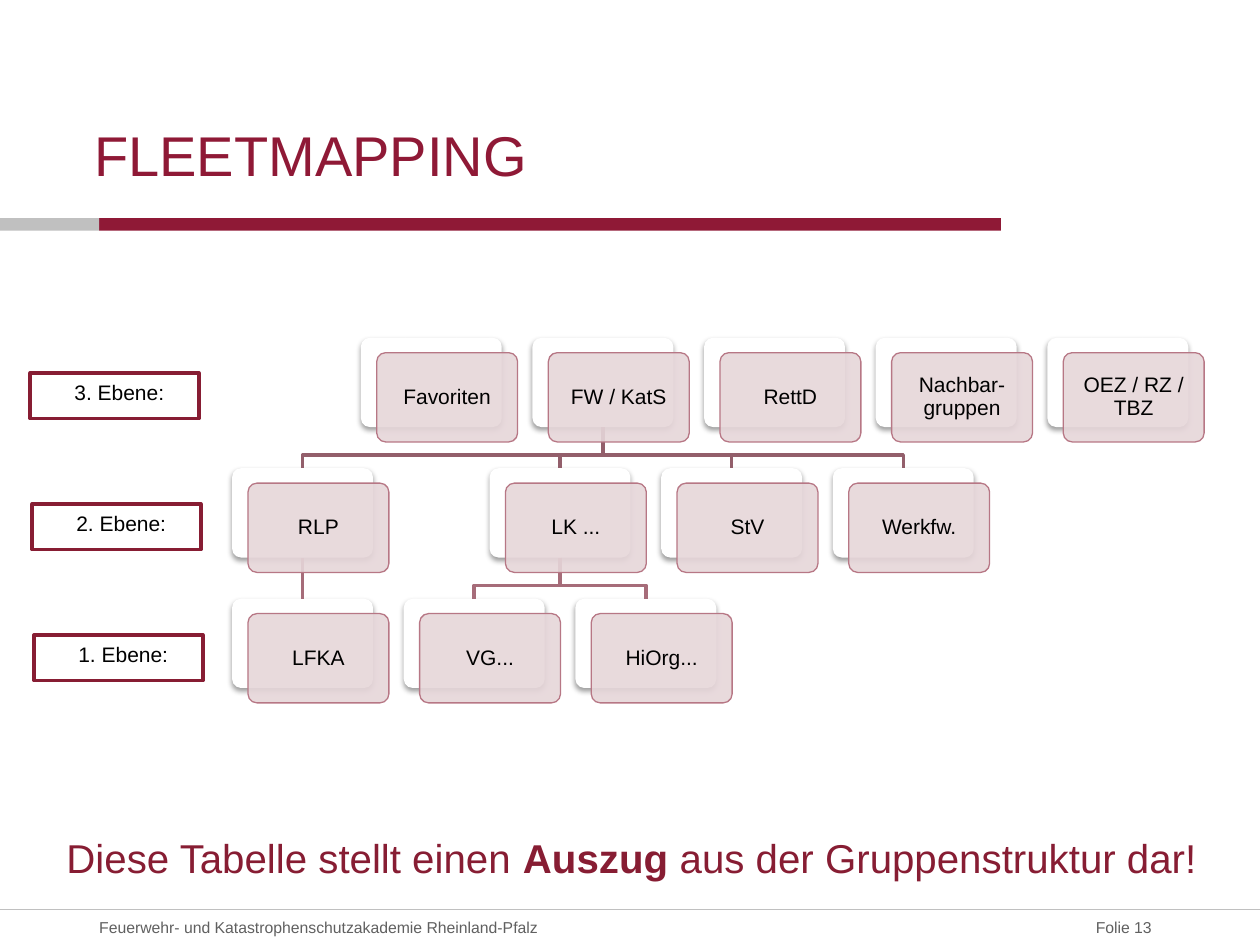
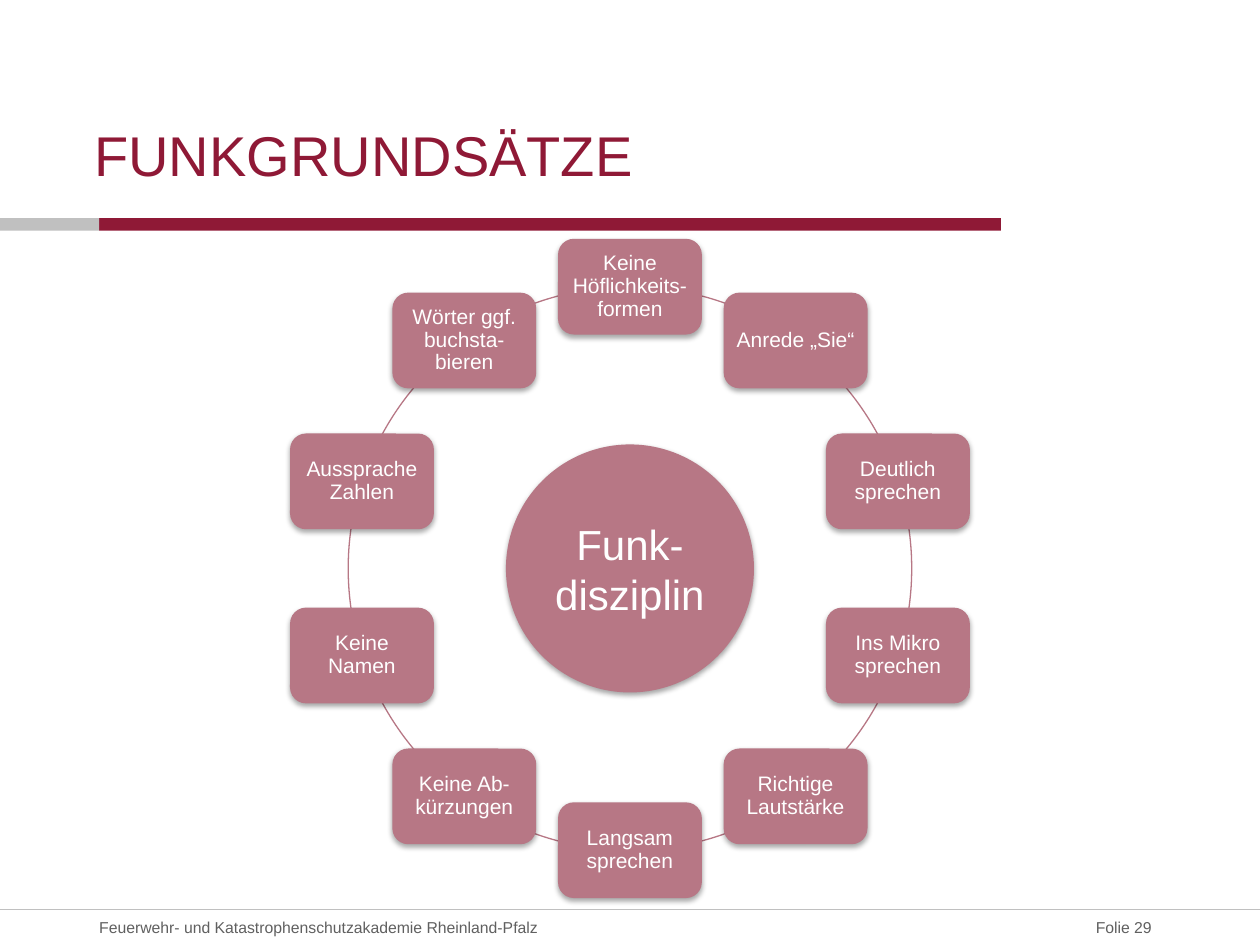
from math import cos, radians, sin

from lxml.etree import SubElement
from pptx import Presentation
from pptx.dml.color import RGBColor
from pptx.enum.shapes import MSO_CONNECTOR, MSO_SHAPE
from pptx.enum.text import MSO_ANCHOR, MSO_AUTO_SIZE, PP_ALIGN
from pptx.oxml.ns import qn
from pptx.util import Cm, Pt

RECT = MSO_SHAPE.RECTANGLE
ROUND = MSO_SHAPE.ROUNDED_RECTANGLE
OVAL = MSO_SHAPE.OVAL
LINE = MSO_CONNECTOR.STRAIGHT
LEFT, MID, RIGHT = PP_ALIGN.LEFT, PP_ALIGN.CENTER, PP_ALIGN.RIGHT
TOP, CENTRE, BASE = MSO_ANCHOR.TOP, MSO_ANCHOR.MIDDLE, MSO_ANCHOR.BOTTOM
FIXED = MSO_AUTO_SIZE.NONE

WHITE = RGBColor(0xFF, 0xFF, 0xFF)
BLACK = RGBColor(0, 0, 0)
RED = RGBColor(0x8F, 0x19, 0x36)
WINE = RGBColor(0x87, 0x1D, 0x33)
ROSE = RGBColor(0xB7, 0x77, 0x85)
PALE = RGBColor(0xE6, 0xD6, 0xD9)
UPPER = RGBColor(0x93, 0x5F, 0x6B)
LOWER = RGBColor(0xA6, 0x6C, 0x79)
SILVER = RGBColor(0xC0, 0xC0, 0xC0)
GREY = RGBColor(0x60, 0x60, 0x60)

FONT = "Arial"
WIDTH, HEIGHT = 25.4, 19.05
INSET = (0.13,) * 4
PLAIN = (0,) * 4
OWNER = "Feuerwehr- und Katastrophenschutzakademie Rheinland-Pfalz"

CARD_W, CARD_H = 2.84, 1.8
NODES = [
    ("Favoriten", 0, 0.75, None),
    ("FW / KatS", 0, 1.75, None),
    ("RettD", 0, 2.75, None),
    ("Nachbar-gruppen", 0, 3.75, None),
    ("OEZ / RZ / TBZ", 0, 4.75, None),
    ("RLP", 1, 0, "FW / KatS"),
    ("LK ...", 1, 1.5, "FW / KatS"),
    ("StV", 1, 2.5, "FW / KatS"),
    ("Werkfw.", 1, 3.5, "FW / KatS"),
    ("LFKA", 2, 0, "RLP"),
    ("VG...", 2, 1, "LK ..."),
    ("HiOrg...", 2, 2, "LK ..."),
]
RULES = [
    "Keine Höflichkeits-formen", "Anrede „Sie“", "Deutlich sprechen",
    "Ins Mikro sprechen", "Richtige Lautstärke", "Langsam sprechen",
    "Keine Ab-kürzungen", "Keine Namen", "Aussprache Zahlen",
    "Wörter ggf. buchsta-bieren",
]


class Deck:
    def __init__(self):
        self.prs = Presentation()
        self.prs.slide_width, self.prs.slide_height = Cm(WIDTH), Cm(HEIGHT)
        self.slide = None

    def start(self, title, number):
        self.slide = self.prs.slides.add_slide(self.prs.slide_layouts[5])
        head = self.slide.shapes.title
        head.left, head.top, head.width, head.height = Cm(1.9), Cm(1.22), Cm(16.23), Cm(2.57)
        self.letter(head, title, 32, RED, LEFT, BASE, PLAIN)
        self.shape(RECT, 2, 4.4, 18.18, 0.25, RED)
        self.shape(RECT, 0, 4.4, 2, 0.25, SILVER)
        self.line(0, 18.33, WIDTH, 18.33, SILVER, 0.75)
        self.label(OWNER, 2, 18.33, 14, 0.72, 9, GREY)
        self.label(f"Folie {number}", 20.17, 18.33, 3.05, 0.72, 9, GREY, RIGHT)

    def letter(self, shape, text, size, ink, align, anchor, inset, space=None):
        frame = shape.text_frame
        frame.word_wrap = True
        frame.auto_size = FIXED
        frame.vertical_anchor = anchor
        (frame.margin_left, frame.margin_top,
         frame.margin_right, frame.margin_bottom) = map(Cm, inset)
        para = frame.paragraphs[0]
        pieces = [text] if isinstance(text, str) else text
        para.text = pieces[0]
        for piece in pieces[1:]:
            para.add_run().text = piece
        para.alignment = align
        para.line_spacing = space
        for run in para.runs:
            run.font.name, run.font.size = FONT, Pt(size)
            run.font.color.rgb = ink
        return para

    def label(self, text, x, y, w, h, size, ink, align=LEFT, inset=PLAIN):
        box = self.slide.shapes.add_textbox(Cm(x), Cm(y), Cm(w), Cm(h))
        return self.letter(box, text, size, ink, align, CENTRE, inset)

    def shape(self, kind, x, y, w, h, fill=None, edge=None, weight=0.75,
              bevel=None, shade=0, alpha=None):
        item = self.slide.shapes.add_shape(kind, Cm(x), Cm(y), Cm(w), Cm(h))
        if bevel is not None:
            item.adjustments[0] = bevel
        self.paint(item, fill, edge, weight)
        props = item.element.spPr
        if alpha:
            tint = props.find(qn("a:solidFill")).find(qn("a:srgbClr"))
            SubElement(tint, qn("a:alpha"), val=str(alpha * 1000))
        if shade:
            drop = SubElement(props.find(qn("a:effectLst")), qn("a:outerShdw"),
                              blurRad="40000", dist="22000", dir="5400000", rotWithShape="0")
            tint = SubElement(drop, qn("a:srgbClr"), val=str(BLACK))
            SubElement(tint, qn("a:alpha"), val=str(shade * 1000))
        return item

    def paint(self, item, fill, edge, weight):
        item.shadow.inherit = False
        if fill is None:
            item.fill.background()
        else:
            item.fill.solid()
            item.fill.fore_color.rgb = fill
        if edge is None:
            item.line.fill.background()
        else:
            item.line.color.rgb = edge
            item.line.width = Pt(weight)

    def line(self, x1, y1, x2, y2, ink, weight):
        link = self.slide.shapes.add_connector(LINE, Cm(x1), Cm(y1), Cm(x2), Cm(y2))
        link.line.color.rgb = ink
        link.line.width = Pt(weight)
        SubElement(link.element.spPr, qn("a:effectLst"))
        return link

    def bend(self, points, ink, weight):
        first, *rest = [(Cm(x), Cm(y)) for x, y in points]
        trace = self.slide.shapes.build_freeform(*first)
        trace.add_line_segments(rest, close=False)
        self.paint(trace.convert_to_shape(), None, ink, weight)


def draw_tree(deck):
    deck.start("FLEETMAPPING", 13)
    note = deck.label(
        ["Diese Tabelle stellt einen ", "Auszug ", "aus der Gruppenstruktur dar!"],
        1.09, 16.66, 24, 1.25, 23, WINE, inset=(0.25, 0.13, 0.25, 0.13))
    note.runs[1].font.bold = True

    spots = {name: (4.68 + 3.46 * col, 6.81 + 2.63 * row) for name, row, col, _ in NODES}
    cards = {name: deck.shape(ROUND, x, y, CARD_W, CARD_H, WHITE, bevel=0.1, shade=38)
             for name, (x, y) in spots.items()}

    for name, row, _, boss in NODES:
        if boss is None:
            continue
        ink = UPPER if row == 1 else LOWER
        (x1, y1), (x2, y2) = spots[boss], spots[name]
        x1, x2, y1 = x1 + CARD_W / 2, x2 + CARD_W / 2, y1 + CARD_H
        if x1 == x2:
            link = deck.line(x1, y1, x2, y2, ink, 2)
            link.begin_connect(cards[boss], 2)
            link.end_connect(cards[name], 0)
        else:
            turn = y1 + 0.56
            deck.bend([(x1, y1), (x1, turn), (x2, turn), (x2, y2)], ink, 2)

    for name, (x, y) in spots.items():
        front = deck.shape(ROUND, x + 0.32, y + 0.3, CARD_W, CARD_H, PALE, ROSE,
                           bevel=0.1, alpha=90)
        deck.letter(front, name, 12, BLACK, MID, CENTRE, INSET, 0.9)

    for row in range(3):
        tag = deck.shape(RECT, 0.61 + 0.04 * row, 7.52 + 2.64 * row, 3.4, 0.92, WHITE, WINE, 2)
        deck.letter(tag, f"{3 - row}. Ebene:", 12, BLACK, LEFT, TOP, (0.89, 0.13, 0.25, 0.13))


def draw_ring(deck):
    deck.start("FUNKGRUNDSÄTZE", 29)
    mid_x, mid_y, reach = WIDTH / 2, 11.46, 5.68
    wide, high, core = 2.9, 1.93, 5
    deck.shape(OVAL, mid_x - reach, mid_y - reach, 2 * reach, 2 * reach, edge=ROSE)
    for i, rule in enumerate(RULES):
        turn = radians(i * 360 / len(RULES))
        x, y = mid_x + reach * sin(turn), mid_y - reach * cos(turn)
        card = deck.shape(ROUND, x - wide / 2, y - high / 2, wide, high, ROSE, shade=35)
        deck.letter(card, rule, 12, WHITE, MID, CENTRE, INSET, 0.9)
    hub = deck.shape(OVAL, mid_x - core / 2, mid_y - core / 2, core, core, ROSE, shade=35)
    deck.letter(hub, "Funk-disziplin", 24, WHITE, MID, CENTRE, INSET)


def main():
    deck = Deck()
    draw_tree(deck)
    draw_ring(deck)
    deck.prs.save("out.pptx")


if __name__ == "__main__":
    main()
